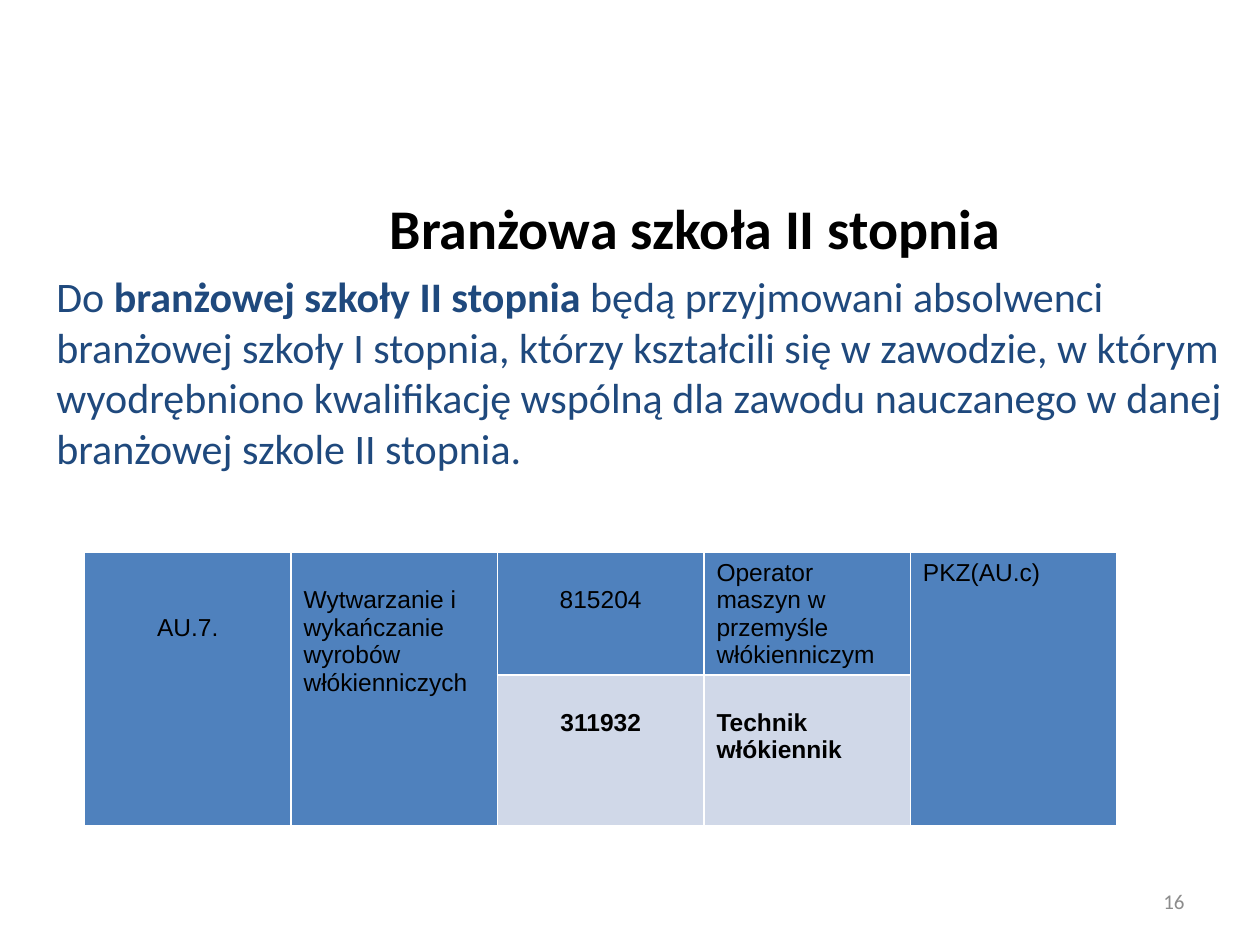
from dataclasses import dataclass

from lxml import etree
from pptx import Presentation
from pptx.dml.color import RGBColor
from pptx.enum.text import MSO_ANCHOR, MSO_AUTO_SIZE, PP_ALIGN
from pptx.oxml.ns import qn
from pptx.util import Pt

LEFT, CENTER, RIGHT = PP_ALIGN.LEFT, PP_ALIGN.CENTER, PP_ALIGN.RIGHT
TOP, MIDDLE = MSO_ANCHOR.TOP, MSO_ANCHOR.MIDDLE
NO_FIT = MSO_AUTO_SIZE.NONE

BLACK = RGBColor(0x00, 0x00, 0x00)
WHITE = RGBColor(0xFF, 0xFF, 0xFF)
NAVY = RGBColor(0x1F, 0x49, 0x7D)
BLUE = RGBColor(0x4F, 0x81, 0xBD)
PALE = RGBColor(0xD0, 0xD8, 0xE8)
GRAY = RGBColor(0x8C, 0x8C, 0x8C)

COL_WIDTH = 118
ROW_HEIGHTS = (69.5, 85.5)
LINE = 15.75  # height of one line of table text


@dataclass
class Entry:
    row: int
    col: int
    text: str
    drop: int = 0  # lines of space above the text
    align: PP_ALIGN = LEFT
    rows: int = 1
    fill: RGBColor = BLUE
    bold: bool = False


ENTRIES = (
    Entry(0, 0, "AU.7.", drop=2, align=CENTER, rows=2),
    Entry(0, 1, "Wytwarzanie i wykańczanie wyrobów włókienniczych", drop=1, rows=2),
    Entry(0, 2, "815204", drop=1, align=CENTER),
    Entry(0, 3, "Operator maszyn w przemyśle włókienniczym"),
    Entry(0, 4, "PKZ(AU.c)", rows=2),
    Entry(1, 2, "311932", drop=1, align=CENTER, fill=PALE, bold=True),
    Entry(1, 3, "Technik włókiennik", drop=1, fill=PALE, bold=True),
)


def write(frame, text, *, size, color, font="Calibri", bold=False,
          align=LEFT, before=0) -> None:
    """Add a run to the last paragraph of the frame and format both."""
    para = frame.paragraphs[-1]
    para.alignment = align
    para.space_before = Pt(before)
    run = para.add_run()
    run.text = text
    run.font.name = font
    run.font.size = Pt(size)
    run.font.bold = bold
    run.font.color.rgb = color


def set_frame(frame, anchor) -> None:
    frame.word_wrap = True
    frame.auto_size = NO_FIT
    frame.vertical_anchor = anchor


def add_box(slide, left, top, width, height, anchor=TOP):
    box = slide.shapes.add_textbox(Pt(left), Pt(top), Pt(width), Pt(height))
    set_frame(box.text_frame, anchor)
    return box.text_frame


def add_edges(cell, color: RGBColor, width: float) -> None:
    props = cell._tc.get_or_add_tcPr()
    for i, side in enumerate(("lnL", "lnR", "lnT", "lnB")):
        line = etree.Element(qn(f"a:{side}"), w=str(Pt(width)))
        fill = etree.SubElement(line, qn("a:solidFill"))
        etree.SubElement(fill, qn("a:srgbClr"), val=str(color))
        props.insert(i, line)


def add_title(slide) -> None:
    title = slide.shapes.title
    title.left, title.top = Pt(127.5), Pt(98.5)
    title.width, title.height = Pt(539.5), Pt(62.5)
    set_frame(title.text_frame, MIDDLE)
    write(title.text_frame, "Branżowa szkoła II stopnia", size=32,
          color=BLACK, bold=True, align=CENTER)


def add_body(slide) -> None:
    frame = add_box(slide, 25.2, 151.2, 686.2, 359.3)
    parts = (
        ("Do ", False),
        ("branżowej szkoły II stopnia ", True),
        ("będą przyjmowani absolwenci branżowej szkoły I stopnia, którzy "
         "kształcili się w zawodzie, w którym wyodrębniono kwalifikację "
         "wspólną dla zawodu nauczanego w danej branżowej szkole II stopnia.",
         False),
    )
    for text, bold in parts:
        write(frame, text, size=24, color=NAVY, bold=bold, before=4.8)


def add_grid(slide) -> None:
    cols = 5
    shape = slide.shapes.add_table(
        len(ROW_HEIGHTS), cols, Pt(48.3), Pt(315.7),
        Pt(cols * COL_WIDTH), Pt(sum(ROW_HEIGHTS)))
    table = shape.table
    for col in table.columns:
        col.width = Pt(COL_WIDTH)
    for row, height in zip(table.rows, ROW_HEIGHTS):
        row.height = Pt(height)
    for item in ENTRIES:
        cell = table.cell(item.row, item.col)
        last = table.cell(item.row + item.rows - 1, item.col)
        if item.rows > 1:
            cell.merge(last)
        for part in (cell, last)[:item.rows]:
            part.fill.solid()
            part.fill.fore_color.rgb = item.fill
            add_edges(part, WHITE, 1)
        cell.vertical_anchor = TOP
        cell.margin_top = Pt(3.6 + item.drop * LINE)
        write(cell.text_frame, item.text, size=14, color=BLACK, font="Arial",
              bold=item.bold, align=item.align)


def main() -> None:
    deck = Presentation()
    deck.slide_width, deck.slide_height = Pt(720), Pt(540)
    slide = deck.slides.add_slide(deck.slide_layouts.get_by_name("Title Only"))
    add_title(slide)
    add_body(slide)
    add_grid(slide)
    number = add_box(slide, 516, 500.5, 168, 28.8, MIDDLE)
    write(number, "16", size=12, color=GRAY, align=RIGHT)
    deck.save("out.pptx")


if __name__ == "__main__":
    main()
